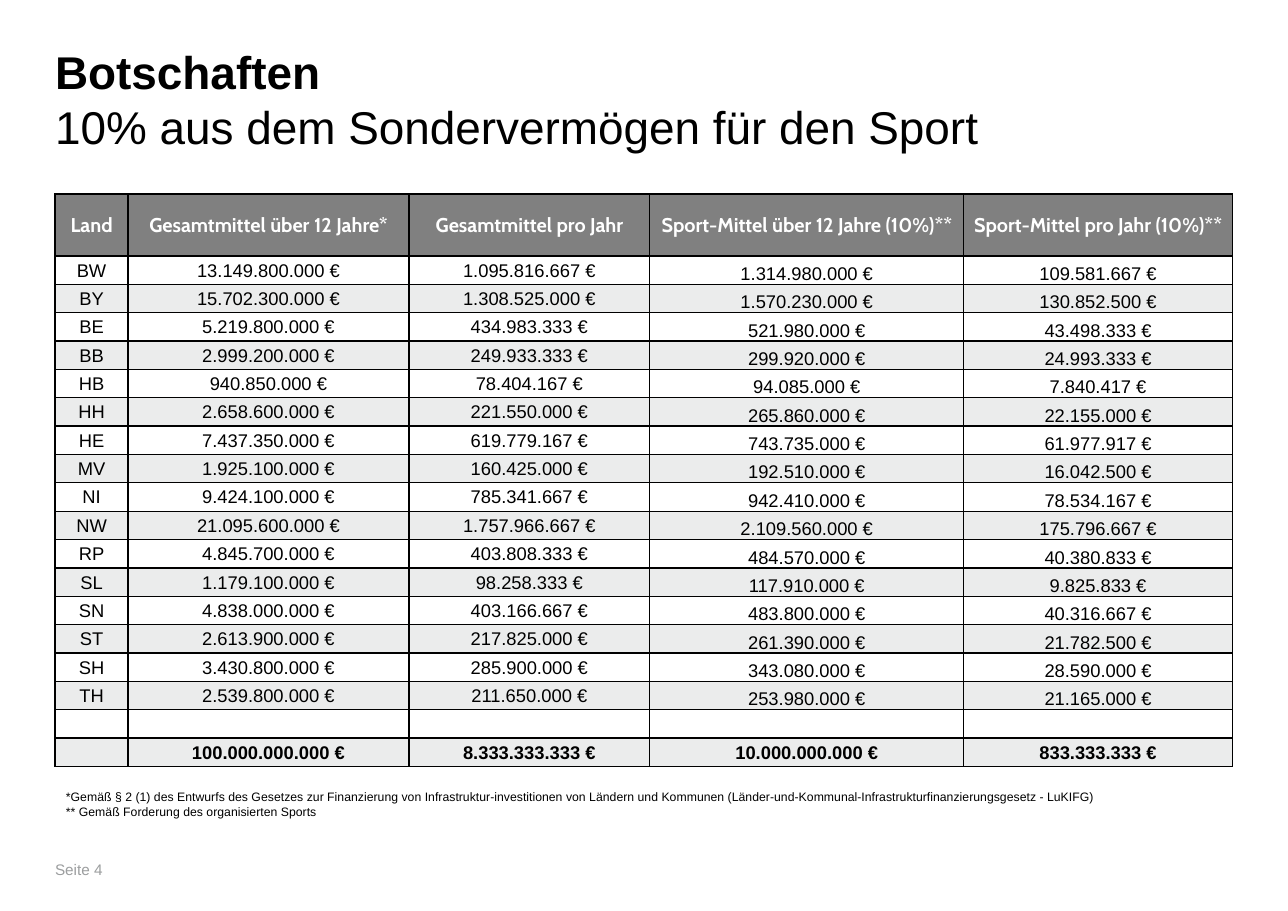
from lxml import etree
from pptx import Presentation
from pptx.dml.color import RGBColor
from pptx.enum import text as t
from pptx.oxml import ns
from pptx.util import Pt

BLACK = RGBColor(0, 0, 0)
WHITE = RGBColor(255, 255, 255)
HEAD = RGBColor(0x80, 0x80, 0x80)
BAND = RGBColor(0xEB, 0xEC, 0xEC)
PAGE = RGBColor(0x9C, 0x9E, 0x9F)
MID, LOW = t.MSO_ANCHOR.MIDDLE, t.MSO_ANCHOR.BOTTOM


def style(par, size, color, bold=False, face="Arial"):
    for run in par.runs:
        font = run.font
        font.name, font.size, font.bold = face, Pt(size), bold
        font.color.rgb = color


def add_text(words, left, top, width, height, size, color, inset=(0, 0)):
    box = slide.shapes.add_textbox(Pt(left), Pt(top), Pt(width), Pt(height))
    frame = box.text_frame
    frame.word_wrap = True
    frame.margin_left = frame.margin_right = Pt(inset[0])
    frame.margin_top = frame.margin_bottom = Pt(inset[1])
    frame.text = words
    for par in frame.paragraphs:
        style(par, size, color)
    return frame


prs = Presentation()
prs.slide_width, prs.slide_height = Pt(841.68), Pt(595.44)
slide = prs.slides.add_slide(prs.slide_layouts[6])

# Title and page number
title = add_text("Botschaften\v10% aus dem Sondervermögen für den Sport",
                 36, 28.5, 770, 79, 30, BLACK)
title.paragraphs[0].line_spacing = Pt(36)
title.paragraphs[0].runs[0].font.bold = True
page = add_text("Seite 4", 36, 560, 57, 14.5, 10, PAGE)
page.vertical_anchor = LOW

# Funds over 12 years, in thousands of euros
funds = {
    "BW": 13149800, "BY": 15702300, "BE": 5219800, "BB": 2999200,
    "HB": 940850, "HH": 2658600, "HE": 7437350, "MV": 1925100,
    "NI": 9424100, "NW": 21095600, "RP": 4845700, "SL": 1179100,
    "SN": 4838000, "ST": 2613900, "SH": 3430800, "TH": 2539800,
    "gap": None, "": 100000000,
}
rows = [["Land", "Gesamtmittel über 12 Jahre*", "Gesamtmittel pro Jahr",
         "Sport-Mittel über 12 Jahre (10%)**",
         "Sport-Mittel pro Jahr (10%)**"]]
for land, fund in funds.items():
    if fund is None:
        rows.append([""] * 5)
        continue
    sums = [fund * 1000 / part for part in (1, 12, 10, 120)]
    rows.append([land] + [f"{round(s):,} €".replace(",", ".") for s in sums])

# Table
last = len(rows) - 1
widths = [47.7, 183.6, 157.4, 205.2, 175.5]
table = slide.shapes.add_table(len(rows), 5, Pt(36), Pt(126.8),
                               Pt(sum(widths)), Pt(374.4)).table
table.first_row = table.horz_banding = False
for col, width in zip(table.columns, widths):
    col.width = Pt(width)

for r, row in enumerate(rows):
    table.rows[r].height = Pt(18.55 if r else 40.5)
    for c, words in enumerate(row):
        cell = table.cell(r, c)
        cell.margin_left = cell.margin_right = cell.margin_top = Pt(0.7)
        cell.margin_bottom = 0
        cell.vertical_anchor = LOW if c > 2 and 0 < r < last else MID
        props = cell._tc.get_or_add_tcPr()
        for side in ("a:lnL", "a:lnR", "a:lnT", "a:lnB"):
            line = etree.SubElement(props, ns.qn(side), w=str(Pt(1)))
            fill = etree.SubElement(line, ns.qn("a:solidFill"))
            etree.SubElement(fill, ns.qn("a:srgbClr"), val=str(BLACK))
        cell.fill.solid()
        cell.fill.fore_color.rgb = HEAD if r == 0 else WHITE if r % 2 else BAND
        par = cell.text_frame.paragraphs[0]
        par.alignment = t.PP_ALIGN.CENTER
        if not words:
            etree.SubElement(par._p, ns.qn("a:endParaRPr"), sz="1200")
            continue
        par.text = words
        if r == 0:
            style(par, 13, WHITE, True, "Cabin")
        else:
            style(par, 12, BLACK, r == last)

# Footnotes
add_text("*Gemäß § 2 (1) des Entwurfs des Gesetzes zur Finanzierung von "
         "Infrastruktur-investitionen von Ländern und Kommunen "
         "(Länder-und-Kommunal-Infrastrukturfinanzierungsgesetz - LuKIFG)\n"
         "** Gemäß Forderung des organisierten Sports",
         36, 512.6, 691, 26.6, 8, BLACK, (7.2, 3.6))

prs.save("out.pptx")
